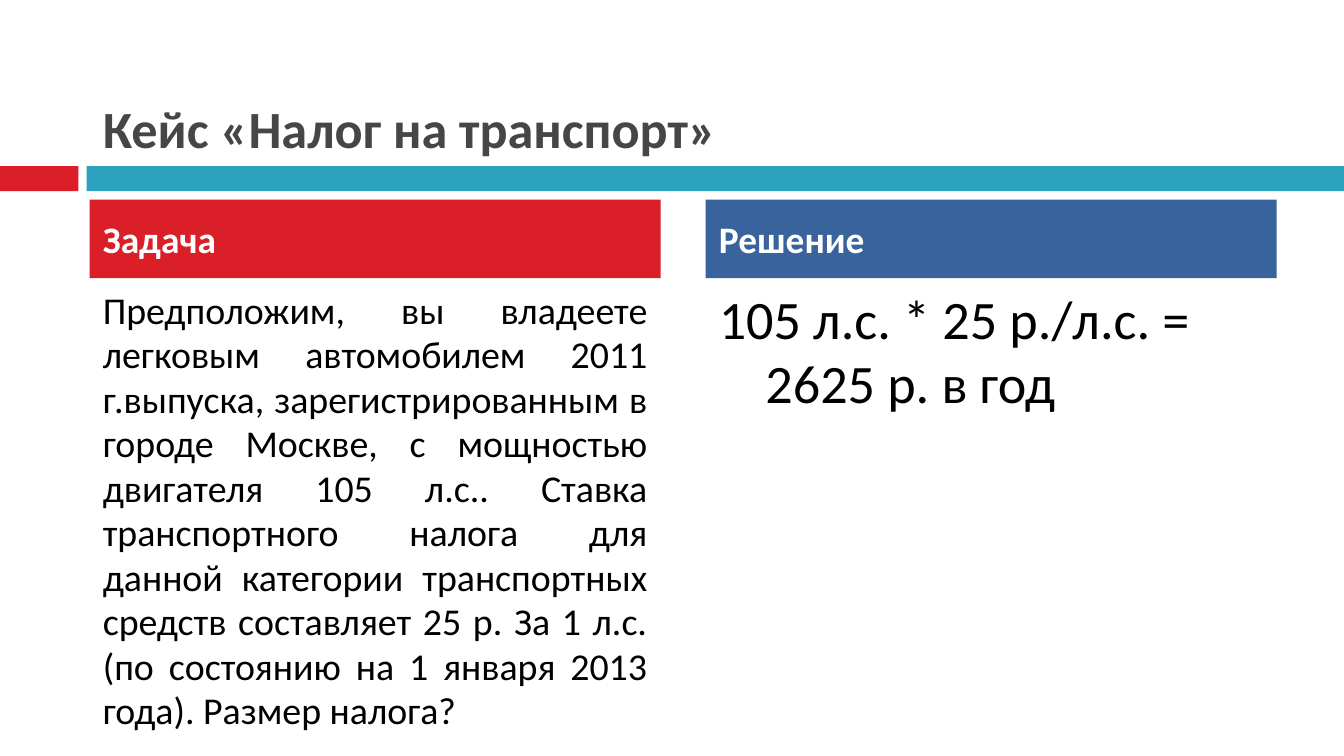
from dataclasses import dataclass

from pptx import Presentation
from pptx.dml.color import RGBColor as RGB
from pptx.enum.shapes import MSO_SHAPE as Kind
from pptx.enum.text import MSO_ANCHOR as Anchor, PP_ALIGN as Align
from pptx.util import Pt


@dataclass(frozen=True)
class Theme:
    font: str = "Calibri"
    red: str = "DA1F28"
    teal: str = "2DA2BF"
    blue: str = "39639D"
    grey: str = "464646"
    black: str = "000000"
    white: str = "FFFFFF"
    title: float = 28
    head: float = 20
    task: float = 20.3
    answer: float = 29


theme = Theme()
deck = Presentation()
deck.slide_width, deck.slide_height = Pt(720), Pt(405)
slide = deck.slides.add_slide(deck.slide_layouts[6])


def add_bar(left, top, width, height, color):
    bar = slide.shapes.add_shape(
        Kind.RECTANGLE, Pt(left), Pt(top), Pt(width), Pt(height))
    bar.shadow.inherit = False
    bar.fill.solid()
    bar.fill.fore_color.rgb = RGB.from_string(color)
    bar.line.fill.background()
    return bar


def set_text(shape, text, size, color, anchor, bold=False, align=Align.LEFT,
             before=7, hang=0, pitch=1.0):
    """Fill a shape with one paragraph; hang is its hanging indent."""
    frame = shape.text_frame
    frame.word_wrap = True
    frame.vertical_anchor = anchor
    para = frame.paragraphs[0]
    para.alignment = align
    para.space_before = Pt(before)
    para.line_spacing = pitch
    if hang:
        props = para._p.get_or_add_pPr()
        props.set("marL", str(Pt(hang)))
        props.set("indent", str(-Pt(hang)))
    run = para.add_run()
    run.text = text
    run.font.name = theme.font
    run.font.size = Pt(size)
    run.font.bold = bold
    run.font.color.rgb = RGB.from_string(color)


# Title and the band below it
add_bar(0, 89, 42, 13.5, theme.red)
add_bar(46.5, 89, 673.5, 13.5, theme.teal)
title = slide.shapes.add_textbox(Pt(48), Pt(9.5), Pt(642), Pt(79))
set_text(title, "Кейс «Налог на транспорт»", theme.title, theme.grey,
         Anchor.BOTTOM, bold=True, before=0)

# Two columns: a coloured heading over its text
task = (
    "Предположим, вы владеете легковым автомобилем 2011 г.выпуска, "
    "зарегистрированным в городе Москве, с мощностью двигателя 105 л.с.. "
    "Ставка транспортного налога для данной категории транспортных средств "
    "составляет 25 р. За 1 л.с. (по состоянию на 1 января 2013 года). "
    "Размер налога?"
)
answer = "105 л.с. * 25 р./л.с. = 2625 р. в год"
columns = [
    ("Задача", theme.red, task, theme.task, Align.JUSTIFY, 0),
    ("Решение", theme.blue, answer, theme.answer, Align.LEFT, 25),
]
for i, (head, color, text, size, align, hang) in enumerate(columns):
    left = 48 + i * 330
    body = slide.shapes.add_textbox(Pt(left), Pt(151), Pt(306), Pt(207.5))
    set_text(body, text, size, theme.black, Anchor.TOP,
             align=align, hang=hang, pitch=0.98)
    bar = add_bar(left, 107, 306, 42, color)
    set_text(bar, head, theme.head, theme.white, Anchor.MIDDLE,
             bold=True, hang=25)

deck.save("out.pptx")
